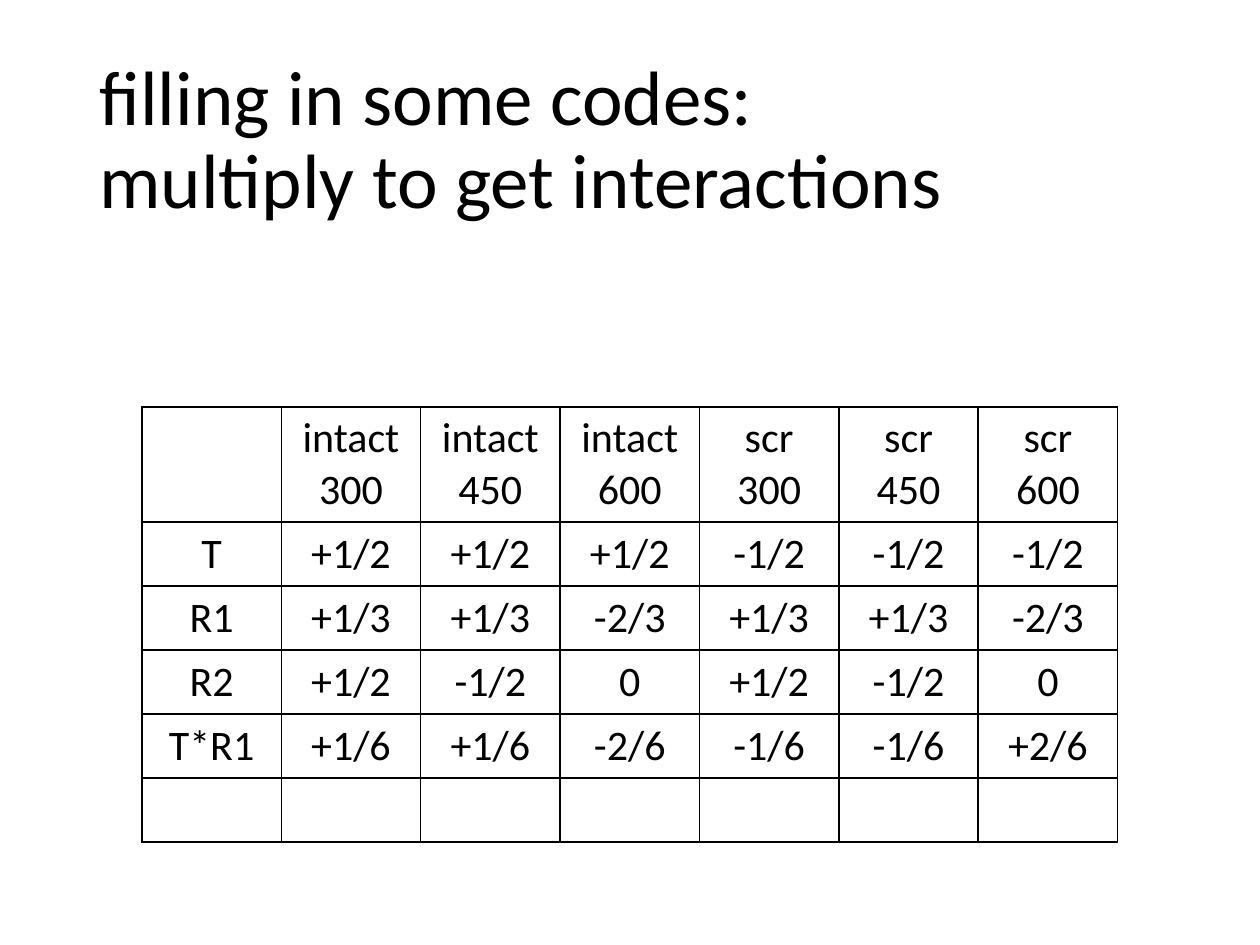
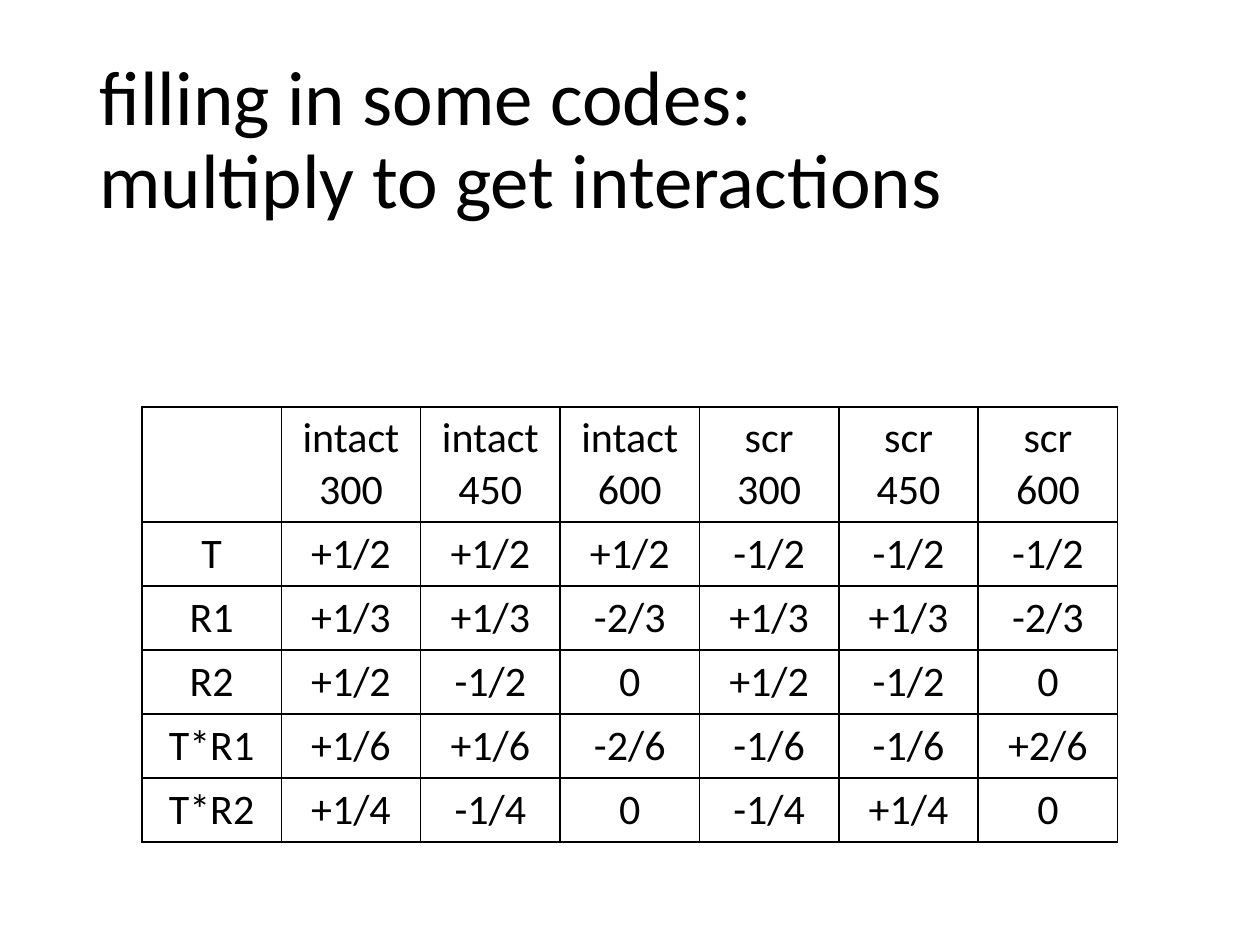
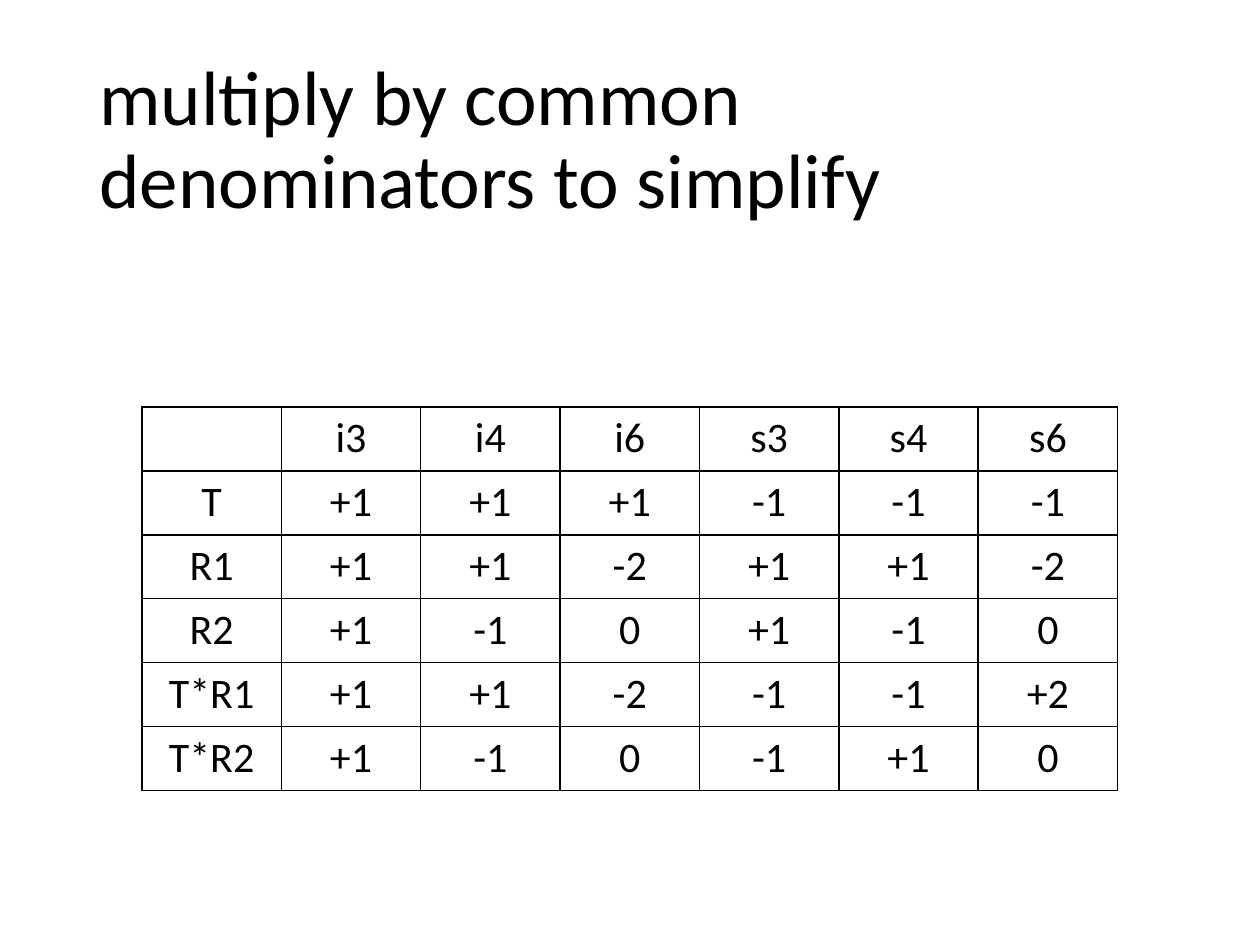
from dataclasses import dataclass

from lxml.etree import SubElement
from pptx import Presentation
from pptx.dml.color import RGBColor
from pptx.enum.text import MSO_ANCHOR, MSO_AUTO_SIZE, PP_ALIGN
from pptx.oxml import parse_xml
from pptx.oxml.ns import nsdecls
from pptx.util import Cm, Pt

INTERACTION_TITLE = "filling in some codes:\vmultiply to get interactions"
SIMPLIFY_TITLE = "multiply by common denominators to simplify"

CONDITIONS = ["", "intact\n300", "intact\n450", "intact\n600", "scr\n300", "scr\n450", "scr\n600"]
MAIN_CODES = [
    ["T", "+1/2", "+1/2", "+1/2", "-1/2", "-1/2", "-1/2"],
    ["R1", "+1/3", "+1/3", "-2/3", "+1/3", "+1/3", "-2/3"],
    ["R2", "+1/2", "-1/2", "0", "+1/2", "-1/2", "0"],
]
FIRST_INTERACTION = ["T*R1", "+1/6", "+1/6", "-2/6", "-1/6", "-1/6", "+2/6"]
SECOND_INTERACTION = ["T*R2", "+1/4", "-1/4", "0", "-1/4", "+1/4", "0"]
UNFILLED = [""] * len(CONDITIONS)
SIMPLIFIED_CODES = [
    ["", "i3", "i4", "i6", "s3", "s4", "s6"],
    ["T", "+1", "+1", "+1", "-1", "-1", "-1"],
    ["R1", "+1", "+1", "-2", "+1", "+1", "-2"],
    ["R2", "+1", "-1", "0", "+1", "-1", "0"],
    ["T*R1", "+1", "+1", "-2", "-1", "-1", "+2"],
    ["T*R2", "+1", "-1", "0", "-1", "+1", "0"],
]

PAGES = [
    (INTERACTION_TITLE, [CONDITIONS, *MAIN_CODES, FIRST_INTERACTION, UNFILLED]),
    (INTERACTION_TITLE, [CONDITIONS, *MAIN_CODES, FIRST_INTERACTION, SECOND_INTERACTION]),
    (SIMPLIFY_TITLE, SIMPLIFIED_CODES),
]


@dataclass(frozen=True)
class Theme:
    font: str = "Calibri"
    ink: str = "000000"
    title_size: int = 44
    cell_size: int = 24
    border: int = 1


THEME = Theme()
TITLE_BOX = (Cm(1.75), Cm(1.02), Cm(21.9), Cm(3.68))
TABLE_LEFT, TABLE_TOP = Cm(2.86), Cm(8.2)
COLUMN_WIDTH = Cm(2.81)
ROW_HEIGHTS = {1: Cm(1.29), 2: Cm(2.32)}


def style_text(frame, size, alignment, line_spacing=None):
    for para in frame.paragraphs:
        para.alignment = alignment
        para.line_spacing = line_spacing
        for span in para.runs:
            span.font.name = THEME.font
            span.font.size = Pt(size)
            span.font.color.rgb = RGBColor.from_string(THEME.ink)


def add_title(page, text):
    box = page.shapes.title
    box.left, box.top, box.width, box.height = TITLE_BOX
    frame = box.text_frame
    frame.text = text
    frame.word_wrap = True
    frame.auto_size = MSO_AUTO_SIZE.NONE
    frame.vertical_anchor = MSO_ANCHOR.MIDDLE
    style_text(frame, THEME.title_size, PP_ALIGN.LEFT, 0.9)


def add_borders(cell):
    properties = cell._tc.get_or_add_tcPr()
    for position, side in enumerate(("lnL", "lnR", "lnT", "lnB")):
        line = parse_xml(f'<a:{side} {nsdecls("a")} w="{Pt(THEME.border)}"><a:solidFill/></a:{side}>')
        SubElement(line[0], line[0].tag.replace("solidFill", "srgbClr"), val=THEME.ink)
        properties.insert(position, line)


def add_code_table(page, rows):
    heights = [ROW_HEIGHTS[max(text.count("\n") + 1 for text in row)] for row in rows]
    columns = len(rows[0])
    table = page.shapes.add_table(
        len(rows), columns, TABLE_LEFT, TABLE_TOP, COLUMN_WIDTH * columns, sum(heights)
    ).table
    table.first_row = False
    table.horz_banding = False
    for column in table.columns:
        column.width = COLUMN_WIDTH
    for table_row, height, texts in zip(table.rows, heights, rows):
        table_row.height = height
        for cell, text in zip(table_row.cells, texts):
            cell.fill.background()
            add_borders(cell)
            cell.text_frame.text = text
            style_text(cell.text_frame, THEME.cell_size, PP_ALIGN.CENTER)


def main():
    deck = Presentation()
    deck.slide_width, deck.slide_height = Cm(25.4), Cm(19.05)
    title_only = deck.slide_layouts.get_by_name("Title Only")
    for title, rows in PAGES:
        page = deck.slides.add_slide(title_only)
        add_title(page, title)
        add_code_table(page, rows)
    deck.save("out.pptx")


if __name__ == "__main__":
    main()
